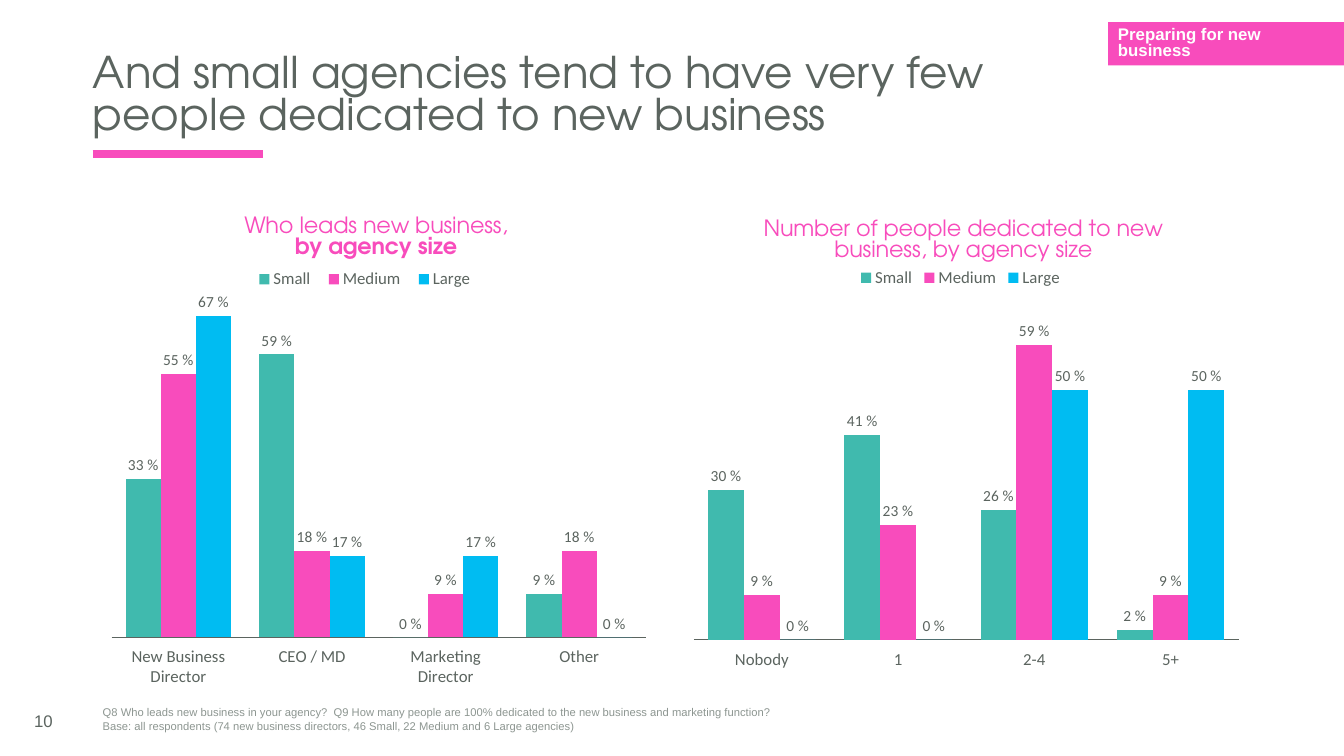
from lxml import etree
from pptx import Presentation
from pptx.chart.data import CategoryChartData
from pptx.dml.color import RGBColor
from pptx.enum.chart import XL_CHART_TYPE, XL_LABEL_POSITION, XL_LEGEND_POSITION, XL_TICK_LABEL_POSITION, XL_TICK_MARK
from pptx.enum.shapes import MSO_CONNECTOR, MSO_SHAPE
from pptx.enum.text import MSO_ANCHOR
from pptx.oxml import parse_xml
from pptx.oxml.ns import nsdecls, qn
from pptx.util import Inches, Pt

PINK = RGBColor(0xF8, 0x4C, 0xBC)
TEAL = RGBColor(0x40, 0xBA, 0xAE)
BLUE = RGBColor(0x00, 0xBC, 0xF2)
GREY = RGBColor(0x5B, 0x64, 0x5F)
LIGHT_GREY = RGBColor(0x8D, 0x96, 0x91)
WHITE = RGBColor(0xFF, 0xFF, 0xFF)

HEADING_FONT = "TeX Gyre Adventor"
BODY_FONT = "Arial"
CHART_FONT = "Calibri"
PERCENT = "0\\ %"
AGENCY_COLORS = {"Small": TEAL, "Medium": PINK, "Large": BLUE}


def set_font(font, name, size, color, bold=False):
    font.name = name
    font.size = Pt(size)
    font.color.rgb = color
    font.bold = bold


def write_text(text_frame, text, name=BODY_FONT, size=12, color=GREY, bold=False,
               anchor=MSO_ANCHOR.TOP, line_spacing=None, side_inset=0.1):
    """Fill a text frame, one paragraph for each line of text."""
    text_frame.word_wrap = True
    text_frame.vertical_anchor = anchor
    text_frame.margin_left = text_frame.margin_right = Inches(side_inset)
    text_frame.text = text
    for paragraph in text_frame.paragraphs:
        paragraph.line_spacing = line_spacing
        set_font(paragraph.runs[0].font, name, size, color, bold)


def add_text(slide, text, left, top, width, height, **text_format):
    box = slide.shapes.add_textbox(Inches(left), Inches(top), Inches(width), Inches(height))
    write_text(box.text_frame, text, **text_format)


def add_heading(slide, left, top, width, height):
    add_text(slide, "And small agencies tend to have very few people dedicated to new business",
             left, top, width, height, name=HEADING_FONT, size=31.2,
             anchor=MSO_ANCHOR.BOTTOM, line_spacing=0.8, side_inset=0)
    rule_top = Inches(top + height + 0.1)
    rule = slide.shapes.add_connector(MSO_CONNECTOR.STRAIGHT, Inches(left), rule_top,
                                      Inches(left + 1.69), rule_top)
    rule.line.color.rgb = PINK
    rule.line.width = Pt(6)
    etree.SubElement(rule._element.spPr, qn("a:effectLst"))


def add_section_tag(slide, left, top, width, height):
    tag = slide.shapes.add_shape(MSO_SHAPE.RECTANGLE, Inches(left), Inches(top),
                                 Inches(width), Inches(height))
    tag.shadow.inherit = False
    tag.fill.solid()
    tag.fill.fore_color.rgb = PINK
    tag.line.fill.background()
    write_text(tag.text_frame, "Preparing for new business", color=WHITE, bold=True,
               anchor=MSO_ANCHOR.MIDDLE, line_spacing=0.8)
    tag.text_frame.paragraphs[0].alignment = 1


def add_footer(slide, left, top, width, height):
    add_text(slide, "10", left, top, 0.6, height, anchor=MSO_ANCHOR.MIDDLE)
    add_text(slide,
             "Q8 Who leads new business in your agency?  Q9 How many people are 100% dedicated "
             "to the new business and marketing function?\n"
             "Base: all respondents (74 new business directors, 46 Small, 22 Medium and 6 Large agencies)",
             left + 0.68, top, width - 0.68, height, size=8, color=LIGHT_GREY)


def chart_layout(x, y, width, height, inner=False):
    """Return a manual layout in fractions of the chart."""
    target = '<c:layoutTarget val="inner"/>' if inner else ""
    return parse_xml(
        f'<c:layout {nsdecls("c")}><c:manualLayout>{target}'
        '<c:xMode val="edge"/><c:yMode val="edge"/>'
        f'<c:x val="{x}"/><c:y val="{y}"/><c:w val="{width}"/><c:h val="{height}"/>'
        '</c:manualLayout></c:layout>')


def add_chart_title(chart, lines):
    """Write the title from (text, bold) lines."""
    text_frame = chart.chart_title.text_frame
    for index, (text, bold) in enumerate(lines):
        paragraph = text_frame.add_paragraph() if index else text_frame.paragraphs[0]
        paragraph.line_spacing = 0.8
        run = paragraph.add_run()
        run.text = text
        set_font(run.font, HEADING_FONT, 16, PINK, bold)
    chart.chart_title.include_in_layout = False


def add_agency_chart(slide, left, top, width, height, title, categories, values, plot, legend):
    """Clustered columns by agency size; plot and legend are fractions of the box."""
    data = CategoryChartData(number_format=PERCENT)
    data.categories = categories
    for name, series_values in zip(AGENCY_COLORS, values):
        data.add_series(name, series_values)
    chart = slide.shapes.add_chart(XL_CHART_TYPE.COLUMN_CLUSTERED, Inches(left), Inches(top),
                                   Inches(width), Inches(height), data).chart
    set_font(chart.font, CHART_FONT, 10, GREY)
    add_chart_title(chart, title)

    chart.has_legend = True
    chart.legend.position = XL_LEGEND_POSITION.TOP
    chart.legend.include_in_layout = False
    set_font(chart.legend.font, CHART_FONT, 12, GREY)
    legend_element = chart.legend._element
    for old_layout in legend_element.findall(qn("c:layout")):
        legend_element.remove(old_layout)
    legend_element.find(qn("c:legendPos")).addnext(chart_layout(*legend))

    plot_area = chart._chartSpace.chart.plotArea
    for old_layout in plot_area.findall(qn("c:layout")):
        plot_area.remove(old_layout)
    plot_area.insert(0, chart_layout(*plot, inner=True))

    category_axis = chart.category_axis
    category_axis.major_tick_mark = XL_TICK_MARK.NONE
    category_axis.tick_label_position = XL_TICK_LABEL_POSITION.LOW
    category_axis.format.line.color.rgb = GREY
    category_axis.format.line.width = Pt(0.75)
    set_font(category_axis.tick_labels.font, CHART_FONT, 12, GREY)
    value_axis = chart.value_axis
    value_axis.minimum_scale = 0
    value_axis.maximum_scale = 0.7
    value_axis.has_major_gridlines = False
    value_axis.visible = False

    columns = chart.plots[0]
    columns.gap_width = 80
    columns.overlap = 0
    columns.vary_by_categories = False
    for series in columns.series:
        series.format.fill.solid()
        series.format.fill.fore_color.rgb = AGENCY_COLORS[series.name]
        labels = series.data_labels
        labels.show_value = True
        labels.position = XL_LABEL_POSITION.OUTSIDE_END
        labels.number_format = PERCENT
        labels.number_format_is_linked = False
        set_font(labels.font, CHART_FONT, 11, GREY)


def main():
    presentation = Presentation()
    presentation.slide_width = Inches(13.33)
    presentation.slide_height = Inches(7.5)
    slide = presentation.slides.add_slide(presentation.slide_layouts[6])
    add_section_tag(slide, 10.99, 0.22, 2.34, 0.43)
    add_heading(slide, 0.92, 0.4, 9.82, 1.03)
    add_agency_chart(
        slide, 0.94, 1.95, 5.58, 4.97,
        title=[("Who leads new business,", False), ("by agency size", True)],
        categories=["New Business Director", "CEO / MD", "Marketing Director", "Other"],
        values=[(0.33, 0.59, 0, 0.09), (0.55, 0.18, 0.09, 0.18), (0.67, 0.17, 0.17, 0)],
        plot=(0.03, 0.21, 0.95, 0.67), legend=(0.27, 0.13, 0.42, 0.07))
    add_agency_chart(
        slide, 6.71, 1.97, 5.69, 4.76,
        title=[("Number of people dedicated to new business, by agency size", False)],
        categories=["Nobody", "1", "2-4", "5+"],
        values=[(0.3, 0.41, 0.26, 0.02), (0.09, 0.23, 0.59, 0.09), (0, 0, 0.5, 0.5)],
        plot=(0.03, 0.19, 0.95, 0.73), legend=(0.31, 0.13, 0.37, 0.07))
    add_footer(slide, 0.24, 6.95, 12.18, 0.4)
    presentation.save("out.pptx")


if __name__ == "__main__":
    main()
